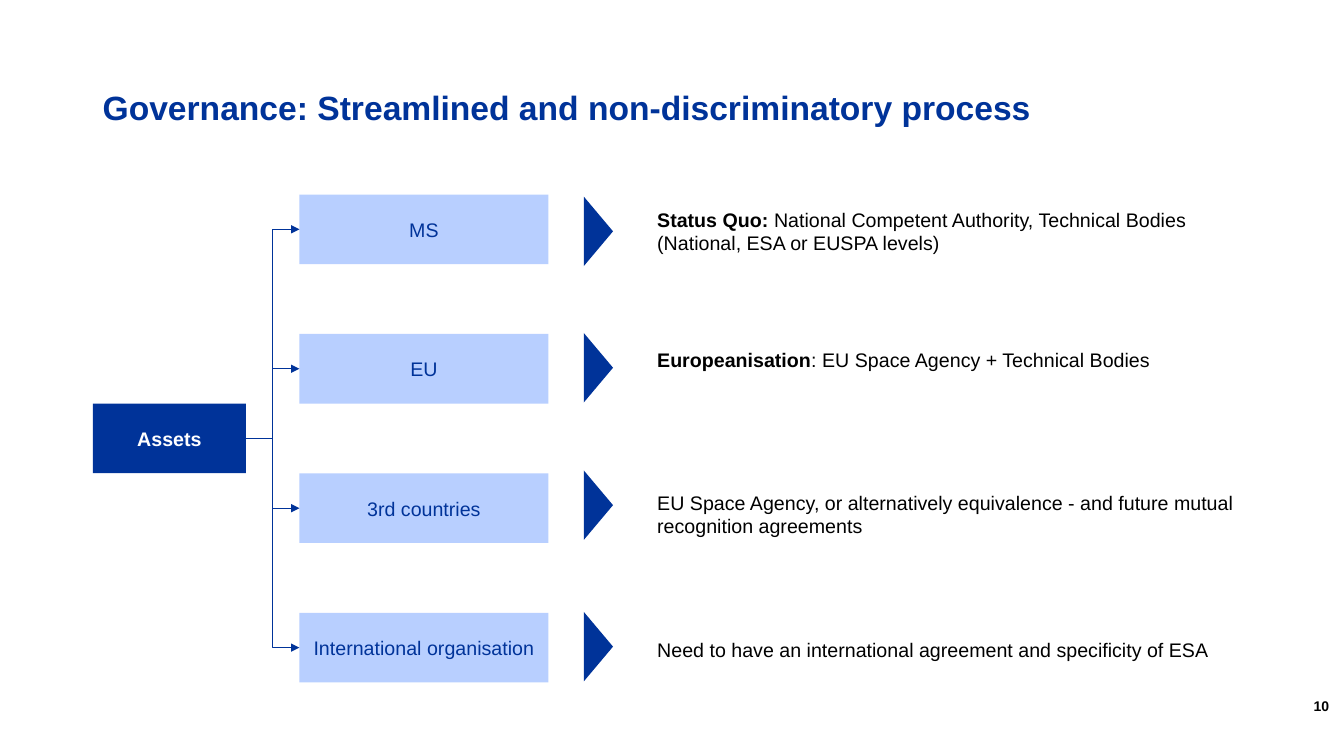
from lxml.etree import SubElement
from pptx import Presentation
from pptx.dml.color import RGBColor
from pptx.enum.shapes import MSO_CONNECTOR, MSO_SHAPE
from pptx.enum.text import MSO_ANCHOR, PP_ALIGN
from pptx.oxml.ns import qn
from pptx.util import Inches, Pt

COLOURS = {"navy": "003399", "pale": "B8CFFF", "white": "FFFFFF", "black": "000000"}
LEFT_SITE, RIGHT_SITE = 1, 3
ROW_HEIGHT = 0.69
ROW_PITCH = (6.08 - 1.93) / 3

ROWS = [
    {"asset": "MS", "arrow_shift": 0.02, "text_shift": 0.08, "text_height": 0.57,
     "lead": "Status Quo: ",
     "rest": "National Competent Authority, Technical Bodies (National, ESA or EUSPA levels)"},
    {"asset": "EU", "arrow_shift": -0.01, "text_shift": 0.09, "text_height": 0.34,
     "lead": "Europeanisation", "rest": ": EU Space Agency + Technical Bodies"},
    {"asset": "3rd countries", "arrow_shift": -0.03, "text_shift": 0.12, "text_height": 0.57,
     "lead": "",
     "rest": "EU Space Agency, or alternatively equivalence - and future mutual recognition agreements"},
    {"asset": "International organisation", "arrow_shift": -0.01, "text_shift": 0.2,
     "text_height": 0.34, "lead": "",
     "rest": "Need to have an international agreement and specificity of ESA"},
]


def colour(name):
    return RGBColor.from_string(COLOURS[name])


def write(shape, spans, size, text_colour, anchor=MSO_ANCHOR.TOP, **para_format):
    frame = shape.text_frame
    frame.word_wrap = True
    frame.vertical_anchor = anchor
    para = frame.paragraphs[0]
    for name, value in para_format.items():
        setattr(para, name, value)
    for text, bold in spans:
        if not text:
            continue
        span = para.add_run()
        span.text = text
        for name, value in {"name": "Arial", "size": Pt(size), "bold": bold}.items():
            setattr(span.font, name, value)
        span.font.color.rgb = colour(text_colour)


def add_text(page, box, spans, size, text_colour, **text_format):
    shape = page.shapes.add_textbox(*map(Inches, box))
    write(shape, spans, size, text_colour, **text_format)


def add_filled(page, kind, box, fill):
    shape = page.shapes.add_shape(kind, *map(Inches, box))
    shape.shadow.inherit = False
    shape.fill.solid()
    shape.fill.fore_color.rgb = colour(fill)
    shape.line.fill.background()
    return shape


def add_node(page, box, label, fill, text_colour, bold):
    node = add_filled(page, MSO_SHAPE.RECTANGLE, box, fill)
    write(node, [(label, bold)], 14, text_colour,
          anchor=MSO_ANCHOR.MIDDLE, alignment=PP_ALIGN.CENTER)
    return node


def add_branch(page, root, node):
    branch = page.shapes.add_connector(MSO_CONNECTOR.ELBOW, 0, 0, 0, 0)
    branch.begin_connect(root, RIGHT_SITE)
    branch.end_connect(node, LEFT_SITE)
    branch.line.color.rgb = colour("navy")
    branch.line.width = Pt(0.5)
    SubElement(branch.line._get_or_add_ln(), qn("a:tailEnd"), type="triangle")
    SubElement(branch._element.spPr, qn("a:effectLst"))


def add_row(page, box, row, root):
    left, top, width, height = box
    node = add_node(page, (left, top, 2.47, height), row["asset"], "pale", "navy", False)
    add_branch(page, root, node)
    depth = 0.29
    arrow_top = top + (height - depth) / 2 + row["arrow_shift"]
    arrow = add_filled(page, MSO_SHAPE.ISOSCELES_TRIANGLE,
                       (left + 2.62, arrow_top, height, depth), "navy")
    arrow.rotation = 90
    text_left = 3.45
    add_text(page, (left + text_left, top + row["text_shift"], width - text_left, row["text_height"]),
             [(row["lead"], True), (row["rest"], False)], 14, "black")


def add_process(page, box):
    left, top, width, height = box
    root_top = top + (height - ROW_HEIGHT) / 2
    root = add_node(page, (left, root_top, 1.52, ROW_HEIGHT), "Assets", "navy", "white", True)
    indent = 2.05
    for index, row in enumerate(ROWS):
        row_box = (left + indent, top + index * ROW_PITCH, width - indent, ROW_HEIGHT)
        add_row(page, row_box, row, root)


def main():
    deck = Presentation()
    deck.slide_width, deck.slide_height = Inches(13.33), Inches(7.5)
    page = deck.slides.add_slide(deck.slide_layouts[6])
    add_text(page, (0.92, 0.64, 11.5, 0.89),
             [("Governance: Streamlined and non-discriminatory process", True)],
             24, "navy", anchor=MSO_ANCHOR.MIDDLE, line_spacing=0.9)
    add_process(page, (0.92, 1.93, 11.73, 3 * ROW_PITCH + ROW_HEIGHT))
    add_text(page, (12.93, 6.74, 0.41, 0.4), [("10", True)], 10, "black",
             anchor=MSO_ANCHOR.BOTTOM)
    deck.save("out.pptx")


if __name__ == "__main__":
    main()
